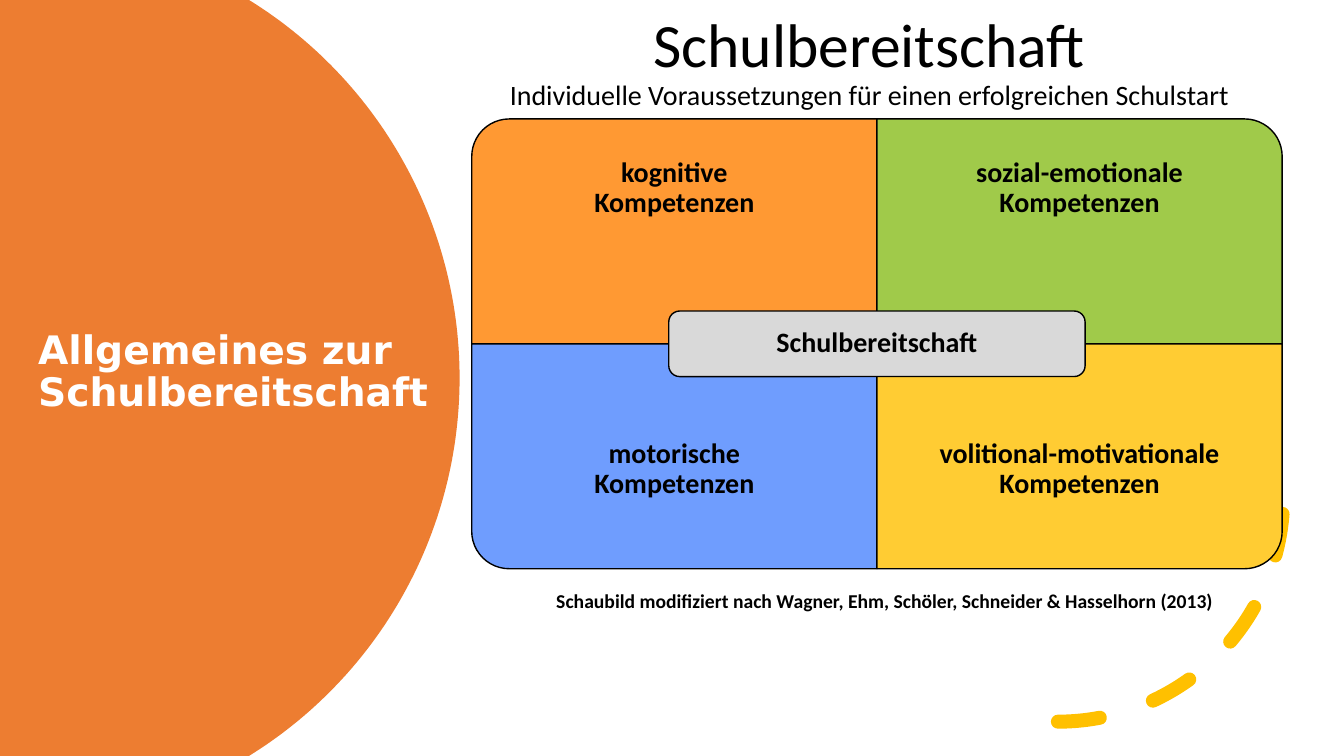
import math
from dataclasses import dataclass

import pptx
import pptx.dml.color
import pptx.enum.dml
import pptx.enum.shapes
import pptx.enum.text
import pptx.oxml.ns
import pptx.util

SHAPE = pptx.enum.shapes.MSO_SHAPE
ALIGN = pptx.enum.text.PP_ALIGN
ANCHOR = pptx.enum.text.MSO_ANCHOR
WIDTH = pptx.util.Inches(13.333)
HEIGHT = pptx.util.Inches(7.5)


@dataclass(frozen=True)
class Area:
    """A rectangle in percent of the slide's width and height."""
    left: float
    top: float
    width: float
    height: float

    def emu(self) -> tuple[int, int, int, int]:
        return (across(self.left), down(self.top),
                across(self.width), down(self.height))


@dataclass(frozen=True)
class Font:
    size: float
    name: str = "Calibri"
    bold: bool = False
    color: str = "000000"


@dataclass(frozen=True)
class Competence:
    label: str
    column: int
    row: int
    turn: int
    fill: str


BOARD_LEFT, BOARD_TOP = 35.1, 15.73
CELL_WIDTH, CELL_HEIGHT = 30.15, 29.75
HUB_WIDTH, HUB_HEIGHT = 30.98, 8.67
LABEL_SHARE = 0.75
LABEL_FONT = Font(20, bold=True)

COMPETENCES = [
    Competence("kognitive\vKompetenzen", 0, 0, 270, "FF9933"),
    Competence("sozial-emotionale\vKompetenzen", 1, 0, 0, "A0CA4A"),
    Competence("motorische\vKompetenzen", 0, 1, 180, "6F9DFE"),
    Competence("volitional-motivationale Kompetenzen", 1, 1, 90, "FFCC33"),
]


def across(percent: float) -> int:
    return round(WIDTH * percent / 100)


def down(percent: float) -> int:
    return round(HEIGHT * percent / 100)


def rgb(color: str) -> pptx.dml.color.RGBColor:
    return pptx.dml.color.RGBColor.from_string(color)


def paint(shape, fill: str, outline: str | None = None) -> None:
    shape.shadow.inherit = False
    shape.fill.solid()
    shape.fill.fore_color.rgb = rgb(fill)
    if outline is None:
        shape.line.fill.background()
    else:
        shape.line.color.rgb = rgb(outline)
        shape.line.width = pptx.util.Pt(1)


def write(shape, text: str, fonts: list[Font], align=ALIGN.CENTER,
          anchor=ANCHOR.MIDDLE, spacing: float = 0.9) -> None:
    """Fill a shape with one paragraph; the last font serves all further runs."""
    frame = shape.text_frame
    frame.word_wrap = True
    frame.vertical_anchor = anchor
    para = frame.paragraphs[0]
    para.text = text
    para.alignment = align
    para.line_spacing = spacing
    for index, span in enumerate(para.runs):
        font = fonts[min(index, len(fonts) - 1)]
        span.font.name = font.name
        span.font.size = pptx.util.Pt(font.size)
        span.font.bold = font.bold
        span.font.color.rgb = rgb(font.color)


def add_text(page, area: Area, text: str, fonts: list[Font], **layout):
    box = page.shapes.add_textbox(*area.emu())
    write(box, text, fonts, **layout)
    return box


def add_disc(page) -> None:
    """Orange circle cut off by the left, top and bottom slide edges."""
    radius, center_x = pptx.util.Inches(4.41), pptx.util.Inches(0.15)
    limit = math.asin(HEIGHT / 2 / radius)
    steps = 120
    angles = [limit * (2 * step / steps - 1) for step in range(steps + 1)]
    rim = [(round(center_x + radius * math.cos(angle)),
            round(HEIGHT / 2 + radius * math.sin(angle))) for angle in angles]
    builder = page.shapes.build_freeform(0, 0)
    builder.add_line_segments(rim + [(0, HEIGHT)], close=True)
    paint(builder.convert_to_shape(), "ED7D31")


def add_dashed_arc(page) -> None:
    arc = page.shapes.add_shape(SHAPE.ARC, *Area(61.95, 35.87, 33.53, 59.6).emu())
    arc.shadow.inherit = False
    arc.fill.background()
    arc.line.color.rgb = rgb("FFC000")
    arc.line.width = pptx.util.Pt(10)
    arc.line.dash_style = pptx.enum.dml.MSO_LINE.DASH
    properties = arc.element.spPr
    properties.find(pptx.oxml.ns.qn("a:ln")).set("cap", "rnd")
    properties.find(pptx.oxml.ns.qn("a:xfrm")).set("flipV", "1")


def add_competence(page, item: Competence) -> None:
    cell = Area(BOARD_LEFT + item.column * CELL_WIDTH,
                BOARD_TOP + item.row * CELL_HEIGHT, CELL_WIDTH, CELL_HEIGHT)
    left, top, width, height = cell.emu()
    # A quarter turn swaps the sides around the same centre
    if item.turn % 180:
        shift = (width - height) // 2
        left, top, width, height = left + shift, top - shift, height, width
    quadrant = page.shapes.add_shape(SHAPE.ROUND_1_RECTANGLE, left, top, width, height)
    quadrant.rotation = item.turn
    paint(quadrant, item.fill, "000000")

    # The label takes the outer three quarters, set above its middle
    label_top = cell.top + item.row * (1 - LABEL_SHARE) * cell.height
    label = add_text(page, Area(cell.left, label_top, cell.width,
                                LABEL_SHARE * cell.height),
                     item.label, [LABEL_FONT])
    label.text_frame.margin_top = pptx.util.Inches(0.09)
    label.text_frame.margin_bottom = pptx.util.Inches(0.39)


def add_hub(page) -> None:
    area = Area(BOARD_LEFT + CELL_WIDTH - HUB_WIDTH / 2,
                BOARD_TOP + CELL_HEIGHT - HUB_HEIGHT / 2, HUB_WIDTH, HUB_HEIGHT)
    hub = page.shapes.add_shape(SHAPE.ROUNDED_RECTANGLE, *area.emu())
    paint(hub, "D9D9D9", "000000")
    write(hub, "Schulbereitschaft", [LABEL_FONT])


def main() -> None:
    deck = pptx.Presentation()
    deck.slide_width, deck.slide_height = WIDTH, HEIGHT
    page = deck.slides.add_slide(deck.slide_layouts[6])

    # Left side
    add_disc(page)
    add_text(page, Area(2.1, 16.8, 31.35, 65.07), "Allgemeines zur Schulbereitschaft",
             [Font(28, "DejaVu Sans", True, "FFFFFF")], align=ALIGN.LEFT)

    # Diagram
    add_dashed_arc(page)
    for item in COMPETENCES:
        add_competence(page, item)
    add_hub(page)

    # Heading and reference
    add_text(page, Area(36.23, 0.8, 56.93, 15.07),
             "Schulbereitschaft\vIndividuelle Voraussetzungen "
             "für einen erfolgreichen Schulstart", [Font(44), Font(20)])
    add_text(page, Area(40.65, 77.2, 58.6, 4.53),
             "Schaubild modifiziert nach Wagner, Ehm, Schöler, "
             "Schneider & Hasselhorn (2013)", [Font(14, bold=True)],
             align=ALIGN.LEFT, anchor=ANCHOR.TOP, spacing=1.0)

    deck.save("out.pptx")


if __name__ == "__main__":
    main()
